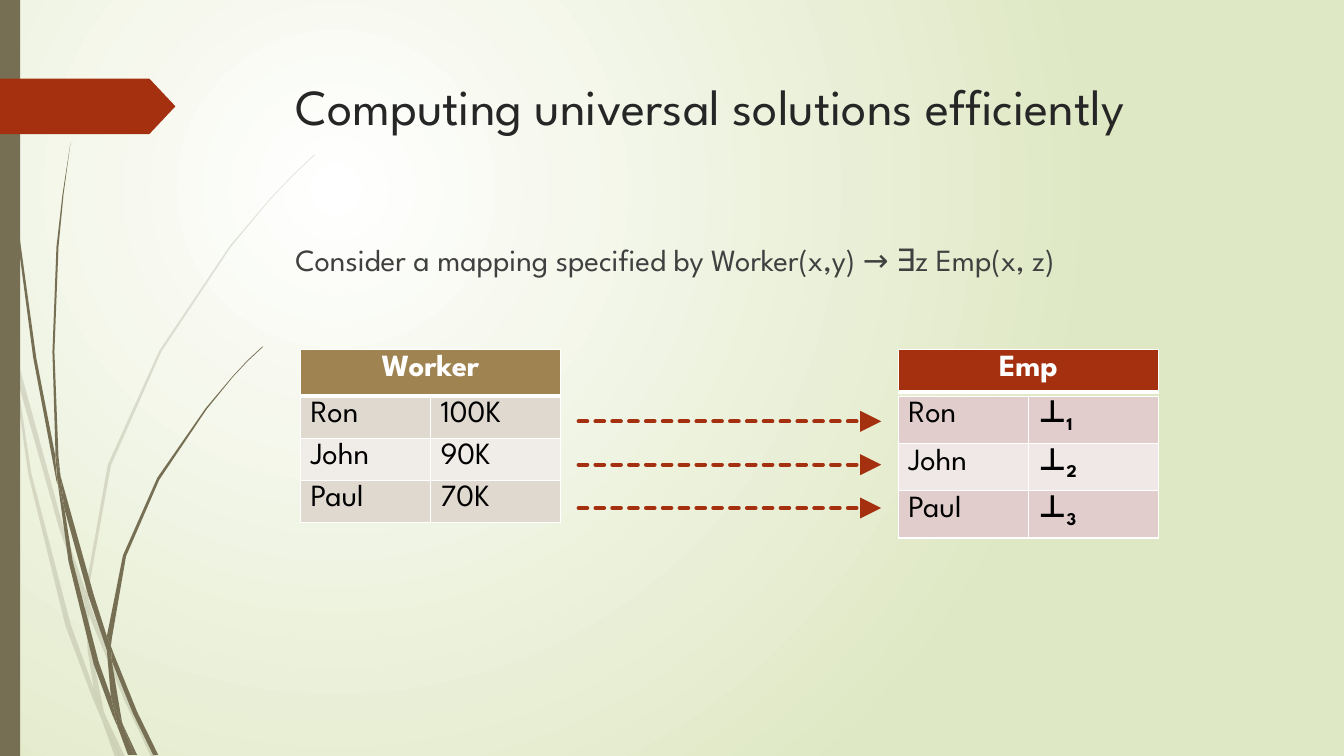
from lxml import etree
from pptx import Presentation
from pptx.dml.color import RGBColor
from pptx.enum import dml, shapes, text
from pptx.oxml import ns
from pptx.util import Inches, Pt

FONT = "League Spartan"
WHITE = RGBColor(0xFF, 0xFF, 0xFF)
BLACK = RGBColor(0x00, 0x00, 0x00)
PALE_GREEN = RGBColor(0xDF, 0xE8, 0xC4)
OLIVE = RGBColor(0x76, 0x6F, 0x54)
RUST = RGBColor(0xA5, 0x30, 0x10)
TITLE_GREY = RGBColor(0x26, 0x26, 0x26)
BODY_GREY = RGBColor(0x40, 0x40, 0x40)
TAN = RGBColor(0x9F, 0x83, 0x51)
WORKER_BANDS = [RGBColor(0xDF, 0xD9, 0xD0), RGBColor(0xF0, 0xED, 0xE9)]
EMP_BANDS = [RGBColor(0xE1, 0xCD, 0xCC), RGBColor(0xF0, 0xE8, 0xE7)]

PALE_BLADES = [
    [(0.11, 3.5), (0.09, 3.22), (0, 2.82), (0, 2.99), (0.1, 3.44)],
    [(0.58, 5.22), (0.84, 5.99), (0.85, 5.86), (0.62, 5.2), (0.14, 3.45), (0.17, 3.76)],
    [(0.92, 6.07), (0.88, 5.96), (0.88, 6.1), (1.23, 6.94), (1.5, 7.51), (1.55, 7.51), (1.27, 6.92)],
    [(1.19, 7.51), (1.24, 7.51), (1.05, 7.11)],
    [(0.93, 6.83), (0.7, 6.19), (0.31, 4.69), (0.17, 3.76), (0.11, 3.5), (0.28, 4.7), (0.65, 6.21),
     (0.92, 6.93), (1.01, 7.14), (0.99, 7.07)],
    [(0.84, 5.99), (0.87, 6.46), (0.93, 6.83), (0.96, 6.92), (1.05, 7.11), (1.03, 7.06),
     (0.91, 6.46), (0.88, 6.1), (0.88, 6.08)],
    [(0.88, 5.84), (1.1, 4.62), (1.6, 3.49), (2.29, 2.45), (2.68, 1.98), (2.9, 1.75), (3.12, 1.54),
     (3.12, 1.53), (2.89, 1.75), (2.68, 1.97), (2.28, 2.44), (1.58, 3.48), (1.07, 4.61),
     (0.85, 5.84), (0.85, 5.86), (0.88, 5.96)],
    [(1.01, 7.14), (1.14, 7.51), (1.19, 7.51)],
    [(0.88, 6.08), (0.88, 6.1), (0.88, 5.96), (0.85, 5.86), (0.84, 5.99)],
    [(0.96, 6.92), (0.93, 6.83), (0.99, 7.07), (1.01, 7.14), (1.19, 7.51), (1.05, 7.11)],
]
DARK_BLADES = [
    [(0.07, 1.1), (0.17, 2.33), (0.33, 3.55), (0.56, 4.77), (0.57, 4.81), (0.55, 4.57), (0.55, 4.53),
     (0.36, 3.55), (0.19, 2.32), (0.08, 1.09), (0.05, 0.48), (0.04, 0), (0.03, 0), (0.04, 0.48)],
    [(0.88, 5.92), (1.06, 6.45), (1.06, 6.33), (1.06, 6.31), (0.93, 5.9), (0.6, 4.72), (0.64, 5.05)],
    [(1.13, 6.49), (1.1, 6.41), (1.11, 6.56), (1.32, 7.08), (1.52, 7.49), (1.57, 7.49), (1.36, 7.06)],
    [(1.1, 6.91), (0.98, 6.57), (0.72, 5.56), (0.64, 5.05), (0.57, 4.77), (0.68, 5.57), (0.93, 6.59),
     (1.11, 7.08), (1.17, 7.22), (1.16, 7.17)],
    [(0.6, 4.72), (0.58, 4.53), (0.54, 3.49), (0.58, 2.45), (0.63, 1.93), (0.7, 1.41),
     (0.62, 1.93), (0.56, 2.45), (0.52, 3.49), (0.55, 4.49)],
    [(1.33, 7.49), (1.36, 7.49), (1.22, 7.19)],
    [(0.57, 4.77), (0.64, 5.05), (0.6, 4.72), (0.55, 4.49), (0.55, 4.53)],
    [(1.11, 6.33), (1.25, 5.52), (1.58, 4.76), (2.05, 4.06), (2.31, 3.74), (2.45, 3.59), (2.61, 3.44),
     (2.6, 3.44), (2.45, 3.58), (2.31, 3.73), (2.04, 4.05), (1.56, 4.74), (1.22, 5.51),
     (1.06, 6.31), (1.1, 6.41)],
    [(1.17, 7.22), (1.27, 7.49), (1.31, 7.49)],
    [(1.06, 6.45), (1.1, 6.91), (1.16, 7.06), (1.22, 7.19), (1.21, 7.16), (1.11, 6.56), (1.09, 6.51)],
    [(1.06, 6.45), (1.09, 6.51), (1.11, 6.56), (1.1, 6.41), (1.06, 6.31), (1.06, 6.33)],
    [(1.16, 7.06), (1.1, 6.91), (1.16, 7.17), (1.17, 7.22), (1.3, 7.49), (1.33, 7.49), (1.22, 7.19)],
]


def add_xml(parent, tag, **attributes):
    """Append a drawing element with its attributes."""
    return etree.SubElement(parent, ns.qn(tag), attributes)


def add_run(paragraph, words, size, color, bold=False):
    """Add one formatted run."""
    run = paragraph.add_run()
    run.text = words
    run.font.name, run.font.size, run.font.bold = FONT, Pt(size), bold
    run.font.color.rgb = color
    return run


def paint(shape, color):
    """Give a shape a plain fill without outline or shadow."""
    shape.shadow.inherit = False
    shape.fill.solid()
    shape.fill.fore_color.rgb = color
    shape.line.fill.background()


def add_grass(slide, blades, opacity):
    """Draw a group of grass blades from their outlines."""
    grass = slide.shapes.add_group_shape()
    for outline in blades:
        start, *rest = [(Inches(x), Inches(y)) for x, y in outline]
        blade = grass.shapes.build_freeform(*start).add_line_segments(rest).convert_to_shape()
        paint(blade, OLIVE)
        color = blade.fill._xPr.find(".//" + ns.qn("a:srgbClr"))
        add_xml(color, "a:alpha", val=str(opacity * 1000))


def add_backdrop(slide, height):
    """Draw the radial background, the grass, the side bar and the tag."""
    fill = slide.background.fill
    fill.gradient()
    for stop, color in zip(fill.gradient_stops, (WHITE, PALE_GREEN)):
        stop.color.rgb = color
    gradient = slide.element.find(".//" + ns.qn("a:gradFill"))
    gradient.remove(gradient.find(ns.qn("a:lin")))
    circle = add_xml(gradient, "a:path", path="circle")
    add_xml(circle, "a:fillToRect", l="50000", t="50000", r="100000", b="100000")
    add_grass(slide, PALE_BLADES, 20)
    add_grass(slide, DARK_BLADES, 100)
    kinds = shapes.MSO_SHAPE
    side_bar = slide.shapes.add_shape(kinds.RECTANGLE, 0, 0, Inches(0.2), height)
    paint(side_bar, OLIVE)
    tag = slide.shapes.add_shape(kinds.PENTAGON, 0, Inches(0.78), Inches(1.74), Inches(0.55))
    tag.adjustments[0] = 0.47
    paint(tag, RUST)


def add_heading(slide, left, top, width):
    """Place the title and the statement below it."""
    title = slide.shapes.title
    title.left, title.top, title.width, title.height = map(Inches, (left, top, width, 1.4))
    statement = slide.shapes.add_textbox(*map(Inches, (left, top + 1.65, width, 4.13)))
    for box in (title, statement):
        box.text_frame.word_wrap = True
        box.text_frame.vertical_anchor = text.MSO_ANCHOR.TOP
        box.text_frame.paragraphs[0].alignment = text.PP_ALIGN.LEFT
    add_run(title.text_frame.paragraphs[0], "Computing universal solutions efficiently", 36, TITLE_GREY)
    mapping = statement.text_frame.paragraphs[0]
    mapping.space_before = Pt(10)
    add_run(mapping, "Consider a mapping specified by Worker(x,y) → ∃z Emp(x, z)", 22, BODY_GREY)


def format_cell(cell, color, bottom=1):
    """Fill a cell and give it white borders."""
    cell.margin_bottom = 0
    cell.fill.solid()
    cell.fill.fore_color.rgb = color
    properties = cell._tc.get_or_add_tcPr()
    for place, side in enumerate("LRTB"):
        border = add_xml(properties, f"a:ln{side}", w=str(Pt(bottom if side == "B" else 1)))
        add_xml(add_xml(border, "a:solidFill"), "a:srgbClr", val=str(WHITE))
        properties.insert(place, border)


def add_grid(slide, left, top, heights, columns):
    """Add an unstyled table with the given row heights."""
    frame = map(Inches, (left, top, 2.58, sum(heights)))
    grid = slide.shapes.add_table(len(heights), columns, *frame).table
    grid.first_row = grid.horz_banding = False
    for row, height in zip(grid.rows, heights):
        row.height = Inches(height)
    return grid


def fill_header(cell, name, color):
    """Write a centred relation name."""
    format_cell(cell, color, bottom=3)
    heading = cell.text_frame.paragraphs[0]
    heading.alignment = text.PP_ALIGN.CENTER
    add_run(heading, name, 22, WHITE, bold=True)


def add_worker(slide, left, top, workers):
    """Build the source relation."""
    grid = add_grid(slide, left, top, [0.46] + [0.4] * len(workers), 2)
    grid.cell(0, 0).merge(grid.cell(0, 1))
    fill_header(grid.cell(0, 0), "Worker", TAN)
    for row, worker in enumerate(workers):
        for column, value in enumerate(worker):
            cell = grid.cell(row + 1, column)
            format_cell(cell, WORKER_BANDS[row % 2])
            add_run(cell.text_frame.paragraphs[0], value, 22, BLACK)


def add_emp(slide, left, top, names):
    """Build the target relation, one table for the header and each tuple."""
    header = add_grid(slide, left, top, [0.4], 1)
    fill_header(header.cell(0, 0), "Emp", RUST)
    for row, name in enumerate(names):
        record = add_grid(slide, left, top + 0.46 + 0.47 * row, [0.4], 2)
        for cell in record.iter_cells():
            format_cell(cell, EMP_BANDS[row % 2])
        add_run(record.cell(0, 0).text_frame.paragraphs[0], name, 22, BLACK)
        null = record.cell(0, 1).text_frame.paragraphs[0]
        add_run(null, "⊥", 22, BLACK, bold=True)
        index = add_run(null, str(row + 1), 22, BLACK, bold=True)
        index.font._element.set("baseline", "-25000")


def add_arrows(slide, left, top, width, count):
    """Draw the dashed arrows between the relations."""
    for row in range(count):
        ends = map(Inches, (left, top + 0.43 * row, left + width, top + 0.43 * row))
        arrow = slide.shapes.add_connector(shapes.MSO_CONNECTOR.STRAIGHT, *ends)
        arrow.line.color.rgb, arrow.line.width = RUST, Pt(3)
        arrow.line.dash_style = dml.MSO_LINE.SQUARE_DOT
        stroke = arrow.line._get_or_add_ln()
        stroke.set("cap", "rnd")
        add_xml(stroke, "a:tailEnd", type="triangle", w="lg", len="lg")
        add_xml(arrow._element.spPr, "a:effectLst")


def main():
    """Build and save the slide."""
    deck = Presentation()
    deck.slide_width, deck.slide_height = Inches(13.33), Inches(7.5)
    slide = deck.slides.add_slide(deck.slide_layouts[5])
    workers = [("Ron", "100K"), ("John", "90K"), ("Paul", "70K")]
    add_backdrop(slide, deck.slide_height)
    add_heading(slide, 2.83, 0.69, 9.75)
    add_worker(slide, 2.98, 3.47, workers)
    add_arrows(slide, 5.74, 4.18, 3, len(workers))
    add_emp(slide, 8.91, 3.47, [name for name, _ in workers])
    deck.save("out.pptx")


if __name__ == "__main__":
    main()
